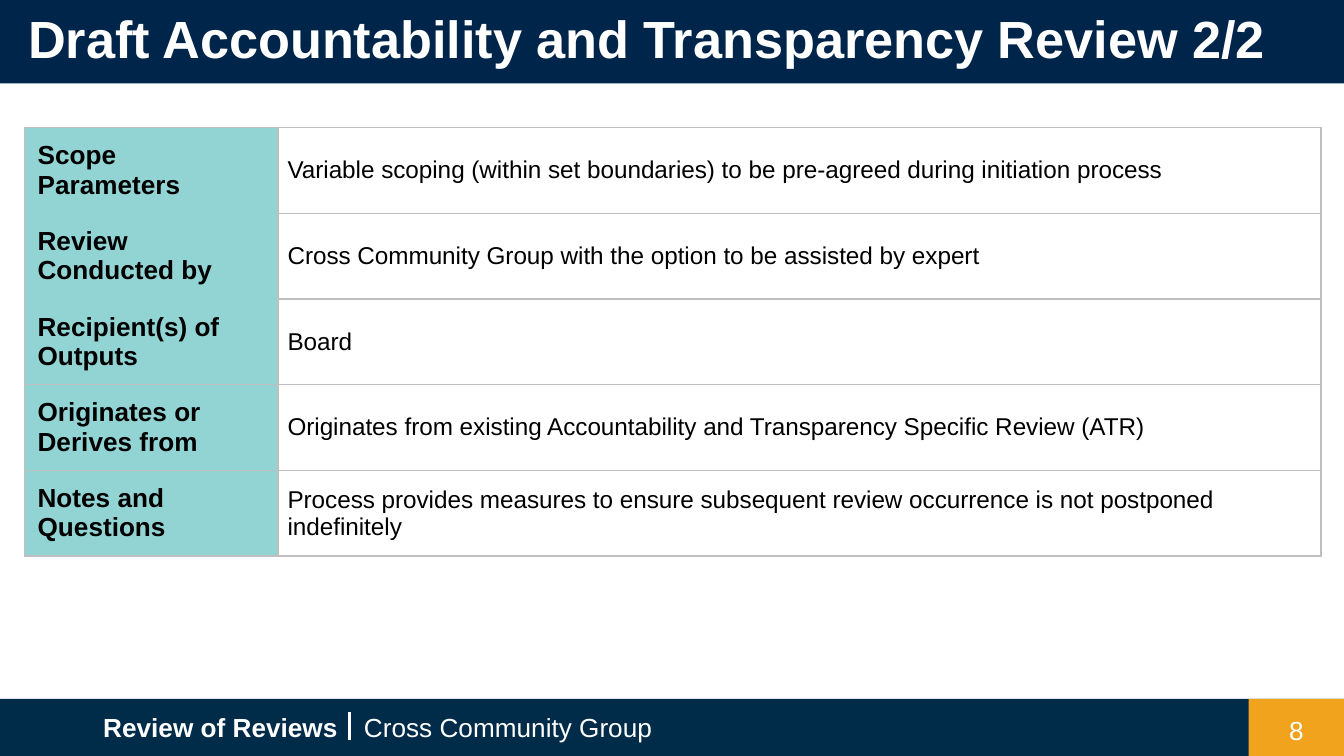
"""Build the slide on the draft Accountability and Transparency Review."""
from lxml.etree import SubElement
from pptx import Presentation
from pptx.dml.color import RGBColor
from pptx.enum.shapes import MSO_CONNECTOR as Connector, MSO_SHAPE as Shape
from pptx.enum.text import MSO_ANCHOR as Anchor, PP_ALIGN as Align
from pptx.oxml.ns import qn
from pptx.util import Inches, Pt

WHITE, BLACK, GREY, TEAL = "FFFFFF", "000000", "BFBFBF", "92D4D4"
ROWS = [
    ("Scope Parameters",
     "Variable scoping (within set boundaries) to be pre-agreed during initiation process"),
    ("Review Conducted by",
     "Cross Community Group with the option to be assisted by expert"),
    ("Recipient(s) of Outputs", "Board"),
    ("Originates or Derives from",
     "Originates from existing Accountability and Transparency Specific Review (ATR)"),
    ("Notes and Questions",
     "Process provides measures to ensure subsequent review occurrence is not postponed indefinitely"),
]


def rgb(value):
    """Turn a hex string into a colour."""
    return RGBColor.from_string(value)


def write(frame, text, size, color, bold=False, align=Align.LEFT):
    """Put one formatted paragraph into a text frame."""
    frame.word_wrap = True
    para = frame.paragraphs[0]
    para.text = text
    para.alignment = align
    font = para.font
    font.name, font.size, font.bold = "Arial", Pt(size), bold
    font.color.rgb = rgb(color)


deck = Presentation()
deck.slide_width = Inches(10)
deck.slide_height = Inches(10 * 9 / 16)
page = deck.slides.add_slide(deck.slide_layouts[5])

for left, top, width, height, color in [
    (0, 5.2, 10, 0.43, "002B49"),
    (9.29, 5.2, 0.71, 0.43, "F1A31E"),
    (0, 0, 10, 0.62, "00254A"),
]:
    bar = page.shapes.add_shape(
        Shape.RECTANGLE, Inches(left), Inches(top), Inches(width), Inches(height))
    bar.shadow.inherit = False
    bar.fill.solid()
    bar.fill.fore_color.rgb = rgb(color)
    bar.line.fill.background()

for left, top, width, text, bold, align in [
    (0.67, 5.19, 2, "Review of Reviews", True, Align.LEFT),
    (2.61, 5.19, 2.51, "Cross Community Group", False, Align.LEFT),
    (9.29, 5.21, 0.71, "8", False, Align.CENTER),
]:
    box = page.shapes.add_textbox(Inches(left), Inches(top), Inches(width), Inches(0.44))
    frame = box.text_frame
    frame.vertical_anchor = Anchor.MIDDLE
    frame.margin_left = frame.margin_right = Inches(0.1)
    frame.margin_top = frame.margin_bottom = Inches(0.1)
    write(frame, text, 14, WHITE, bold, align)

divider = page.shapes.add_connector(
    Connector.STRAIGHT, Inches(2.6), Inches(5.3), Inches(2.6), Inches(5.51))
divider.line.color.rgb = rgb(WHITE)
divider.line.width = Pt(1.5)
SubElement(divider.element.spPr, qn("a:effectLst"))

title = page.shapes.title
title.left, title.top, title.width, title.height = (
    Inches(0.11), Inches(0), Inches(9.83), Inches(0.6))
title.text_frame.vertical_anchor = Anchor.TOP
write(title.text_frame, "Draft Accountability and Transparency Review 2/2", 28, WHITE, True)
title.element.getparent().append(title.element)

table = page.shapes.add_table(
    len(ROWS), 2, Inches(0.18), Inches(0.95), Inches(9.65), Inches(3.15)).table
table.first_row = table.horz_banding = False
table.columns[0].width, table.columns[1].width = Inches(1.89), Inches(7.76)

for index, texts in enumerate(ROWS):
    table.rows[index].height = Inches(0.63)
    label_edges = "L" + ("T" if index in (0, 3, 4) else "") + ("B" if index >= 2 else "")
    for column, (text, size, margin, edges, line_width) in enumerate([
        (texts[0], 14, 0.1, label_edges, 0.75),
        (texts[1], 13, 0.07, "LRTB", 1),
    ]):
        cell = table.cell(index, column)
        cell.vertical_anchor = Anchor.MIDDLE
        cell.margin_left = cell.margin_right = Inches(margin)
        cell.margin_top = cell.margin_bottom = Inches(margin)
        write(cell.text_frame, text, size, BLACK, column == 0)
        properties = cell._tc.get_or_add_tcPr()
        for edge in "LRTB":
            border = SubElement(properties, qn(f"a:ln{edge}"), w=str(Pt(line_width)))
            if edge in edges:
                SubElement(SubElement(border, qn("a:solidFill")), qn("a:srgbClr"), val=GREY)
            else:
                SubElement(border, qn("a:noFill"))
        if column == 0:
            cell.fill.solid()
            cell.fill.fore_color.rgb = rgb(TEAL)
        else:
            cell.fill.background()

deck.save("out.pptx")
